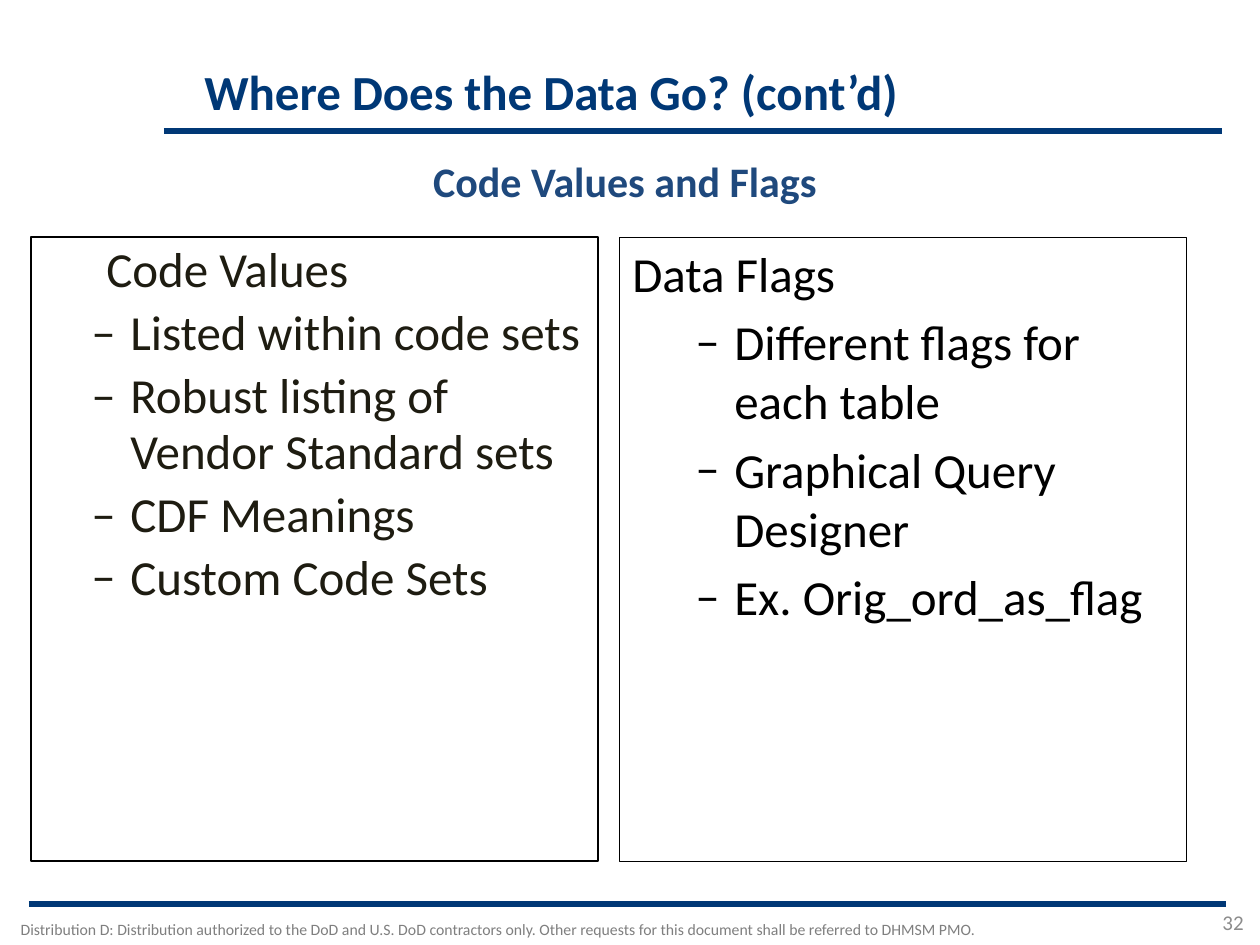
"""Build the slide on code values and data flags."""
import dataclasses

import lxml.etree
import pptx
import pptx.dml.color
import pptx.enum.shapes
import pptx.enum.text
import pptx.oxml.ns
import pptx.util

ALIGN = pptx.enum.text.PP_ALIGN
ANCHOR = pptx.enum.text.MSO_ANCHOR
EMU_PER_PX = 914400 / 126


@dataclasses.dataclass(frozen=True)
class Theme:
    font: str = "Calibri"
    navy: str = "003876"
    blue: str = "1F497D"
    ink: str = "1E1C11"
    black: str = "000000"
    footer_gray: str = "7F7F7F"
    number_gray: str = "8C8C8C"
    heading_size: int = 28
    subtitle_size: int = 24
    number_size: int = 12
    footer_size: int = 9
    rule_width: int = 3


def px(length):
    return pptx.util.Emu(round(length * EMU_PER_PX))


def rgb(color):
    return pptx.dml.color.RGBColor.from_string(color)


def add_element(parent, tag, **attributes):
    return lxml.etree.SubElement(parent, pptx.oxml.ns.qn(tag), **attributes)


def write_text(frame, text, *, font, size, color, bold=False, align=ALIGN.LEFT,
               level=0, left=0, hanging=0, bullet=None, line_spacing=None, before=0):
    first = not frame.paragraphs[0].runs
    paragraph = frame.paragraphs[0] if first else frame.add_paragraph()
    properties = paragraph._p.get_or_add_pPr()
    properties.set("marL", str(px(left)))
    properties.set("indent", str(px(-hanging)))
    if bullet:
        add_element(add_element(properties, "a:buClr"), "a:srgbClr", val=color)
        add_element(properties, "a:buFont", typeface=font)
        add_element(properties, "a:buChar", char=bullet)
    paragraph.level = level
    paragraph.alignment = align
    if line_spacing:
        paragraph.line_spacing = line_spacing
    if before and not first:
        paragraph.space_before = pptx.util.Pt(before)
    run = paragraph.add_run()
    run.text = text
    run.font.name = font
    run.font.size = pptx.util.Pt(size)
    run.font.bold = bold
    run.font.color.rgb = rgb(color)


class SlideBuilder:
    def __init__(self, presentation, theme):
        self.theme = theme
        self.slide = presentation.slides.add_slide(presentation.slide_layouts[6])

    def rule(self, left, right, y):
        line = self.slide.shapes.add_connector(
            pptx.enum.shapes.MSO_CONNECTOR.STRAIGHT, px(left), px(y), px(right), px(y))
        line.line.color.rgb = rgb(self.theme.navy)
        line.line.width = pptx.util.Pt(self.theme.rule_width)
        add_element(line._element.spPr, "a:effectLst")

    def text(self, box, text, anchor=ANCHOR.TOP, **text_format):
        shape = self.slide.shapes.add_textbox(*map(px, box))
        shape.text_frame.word_wrap = True
        shape.text_frame.vertical_anchor = anchor
        write_text(shape.text_frame, text, font=self.theme.font, **text_format)

    def panel(self, left, heading, items, *, border, color, heading_left, item_left,
              before, line_spacing=None):
        shape = self.slide.shapes.add_shape(
            pptx.enum.shapes.MSO_SHAPE.RECTANGLE, px(left), px(237), px(567), px(624))
        shape.shadow.inherit = False
        shape.fill.background()
        shape.line.color.rgb = rgb(self.theme.black)
        shape.line.width = pptx.util.Pt(border)
        frame = shape.text_frame
        frame.word_wrap = True
        frame.vertical_anchor = ANCHOR.TOP
        style = dict(font=self.theme.font, size=self.theme.heading_size, color=color,
                     before=before, line_spacing=line_spacing)
        write_text(frame, heading, left=heading_left, **style)
        for item in items:
            write_text(frame, item, level=1, left=item_left, hanging=39, bullet="–", **style)


def main():
    presentation = pptx.Presentation()
    presentation.slide_width = px(1260)
    presentation.slide_height = px(945)
    theme = Theme()
    builder = SlideBuilder(presentation, theme)

    builder.rule(29, 1226, 904)
    builder.rule(164, 1222, 131)
    builder.text(
        (0, 914, 995, 31),
        "Distribution D: Distribution authorized to the DoD and U.S. DoD contractors only. "
        "Other requests for this document shall be referred to DHMSM PMO.",
        size=theme.footer_size, color=theme.footer_gray, align=ALIGN.CENTER)
    builder.text((1152, 902, 104, 39), "32", anchor=ANCHOR.BOTTOM,
                 size=theme.number_size, color=theme.number_gray, align=ALIGN.RIGHT)
    builder.text((192, 1, 1032, 126), "Where Does the Data Go? (cont’d)",
                 anchor=ANCHOR.BOTTOM, size=theme.heading_size, color=theme.navy,
                 bold=True, line_spacing=0.9)
    builder.panel(
        31, "Code Values",
        ["Listed within code sets", "Robust listing of Vendor Standard sets",
         "CDF Meanings", "Custom Code Sets"],
        border=1, color=theme.ink, heading_left=63, item_left=87,
        before=4, line_spacing=0.95)
    builder.panel(
        620, "Data Flags",
        ["Different flags for each table", "Graphical Query Designer",
         "Ex. Orig_ord_as_flag"],
        border=0.5, color=theme.black, heading_left=0, item_left=102, before=5.6)
    builder.text((58, 149, 1134, 67), "Code Values and Flags", size=theme.subtitle_size,
                 color=theme.blue, bold=True, align=ALIGN.CENTER)
    presentation.save("out.pptx")


if __name__ == "__main__":
    main()
